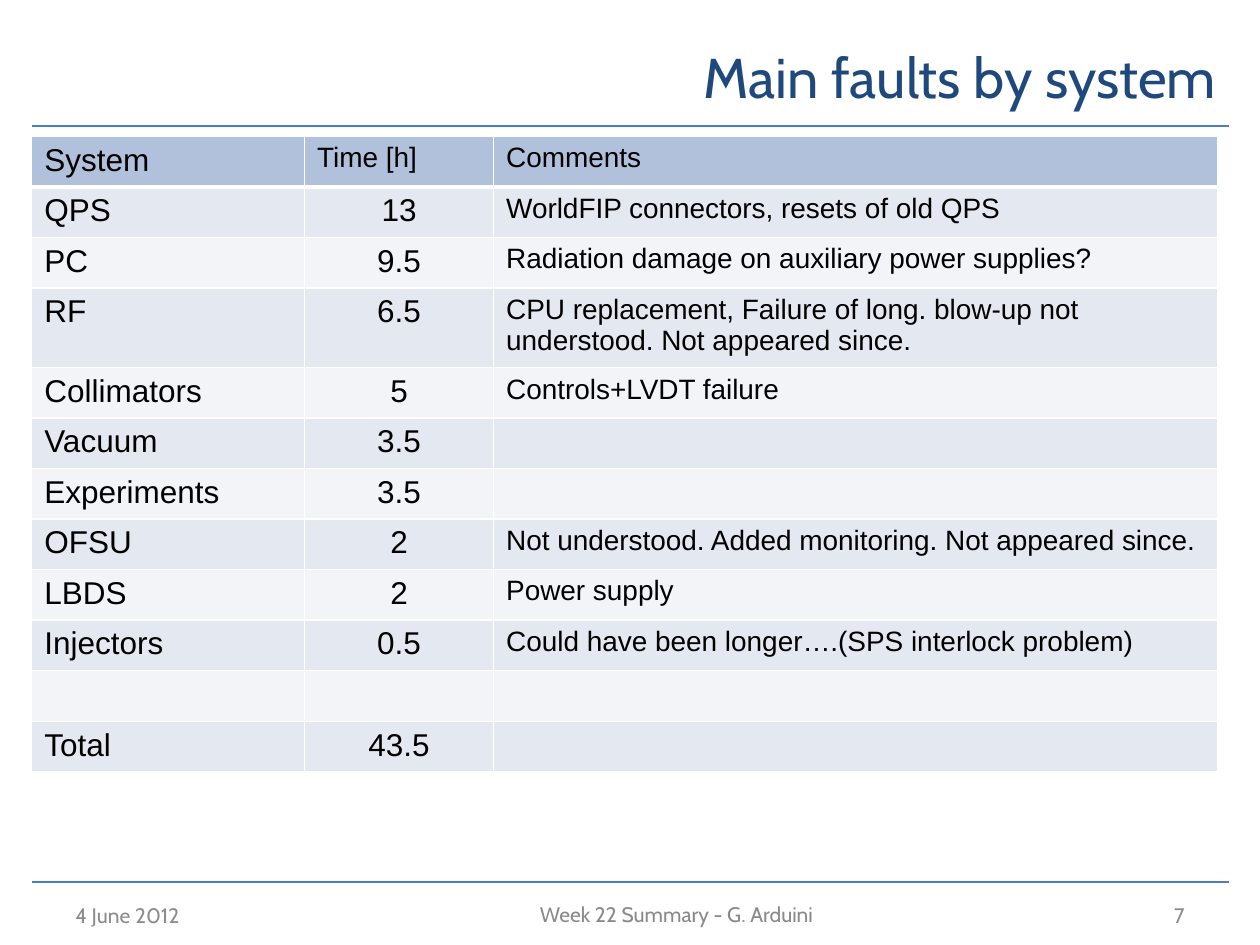
from dataclasses import dataclass

from lxml import etree
from pptx import Presentation
from pptx.dml.color import RGBColor
from pptx.enum.shapes import MSO_CONNECTOR
from pptx.enum.text import MSO_ANCHOR, PP_ALIGN
from pptx.oxml.ns import qn
from pptx.util import Cm, Pt

LEFT, CENTER, RIGHT = PP_ALIGN.LEFT, PP_ALIGN.CENTER, PP_ALIGN.RIGHT
MIDDLE = MSO_ANCHOR.MIDDLE
STRAIGHT = MSO_CONNECTOR.STRAIGHT

HEADER_FILL = "B2C1DB"
BAND_FILLS = ("F2F4F8", "E4E9F1")
COL_WIDTHS = (5.5, 3.81, 14.6)


@dataclass
class Label:
    text: str
    box: tuple[float, float, float, float]
    size: int
    color: str
    align: PP_ALIGN


@dataclass
class Fault:
    system: str = ""
    hours: str = ""
    comment: str = ""
    height: float = 0.97


LABELS = [
    Label("Main faults by system", (4.45, 0.43, 20.32, 2.21), 32, "1F497D", RIGHT),
    Label("4 June 2012", (1.27, 18.21, 5.92, 0.46), 12, "8C8C8C", LEFT),
    Label("Week 22 Summary - G. Arduini", (4.65, 18.21, 17.98, 0.43), 12, "898989", CENTER),
    Label("7", (18.21, 18.21, 5.92, 0.46), 12, "8C8C8C", RIGHT),
]

ROWS = [
    Fault("System", "Time [h]", "Comments", 0.98),
    Fault("QPS", "13", "WorldFIP connectors, resets of old QPS"),
    Fault("PC", "9.5", "Radiation damage on auxiliary power supplies?"),
    Fault("RF", "6.5", "CPU replacement, Failure of long. blow-up not understood. "
          "Not appeared since.", 1.51),
    Fault("Collimators", "5", "Controls+LVDT failure"),
    Fault("Vacuum", "3.5"),
    Fault("Experiments", "3.5"),
    Fault("OFSU", "2", "Not understood. Added monitoring. Not appeared since."),
    Fault("LBDS", "2", "Power supply"),
    Fault("Injectors", "0.5", "Could have been longer….(SPS interlock problem)"),
    Fault(height=1.03),
    Fault("Total", "43.5"),
]


def rgb(value: str) -> RGBColor:
    return RGBColor.from_string(value)


def add_text(p, text: str, font: str, size: int, color: str, align: PP_ALIGN) -> None:
    p.alignment = align
    r = p.add_run()
    r.text = text
    for name, value in {"name": font, "size": Pt(size)}.items():
        setattr(r.font, name, value)
    r.font.color.rgb = rgb(color)


def add_label(s, label: Label) -> None:
    sp = s.shapes.add_textbox(*map(Cm, label.box))
    tf = sp.text_frame
    tf.word_wrap = True
    tf.vertical_anchor = MIDDLE
    add_text(tf.paragraphs[0], label.text, "Cabin", label.size, label.color, label.align)


def add_rule(s, y: float) -> None:
    sp = s.shapes.add_connector(STRAIGHT, Cm(0.64), Cm(y), Cm(24.77), Cm(y))
    sp.line.color.rgb = rgb("4B7EBC")
    sp.line.width = Pt(1.5)
    etree.SubElement(sp._element.spPr, qn("a:effectLst"))


def set_borders(cell, widths: dict[str, int]) -> None:
    tc_pr = cell._tc.get_or_add_tcPr()
    for i, (side, width) in enumerate(widths.items()):
        ln = etree.Element(qn(f"a:{side}"), w=str(Pt(width)))
        fill = etree.SubElement(ln, qn("a:solidFill"))
        etree.SubElement(fill, qn("a:srgbClr"), val="FFFFFF")
        tc_pr.insert(i, ln)


def fill_cell(cell, text: str, size: int, align: PP_ALIGN, fill: str) -> None:
    cell.fill.solid()
    cell.fill.fore_color.rgb = rgb(fill)
    p = cell.text_frame.paragraphs[0]
    if text:
        add_text(p, text, "Arial", size, "000000", align)
    else:
        # An empty cell keeps its row low through its end mark
        end = etree.SubElement(p._p, qn("a:endParaRPr"), sz=str(size * 100))
        etree.SubElement(end, qn("a:latin"), typeface="Arial")


def add_fault_table(s, rows: list[Fault]) -> None:
    width, height = sum(COL_WIDTHS), sum(row.height for row in rows)
    table = s.shapes.add_table(len(rows), len(COL_WIDTHS), Cm(0.64), Cm(2.75),
                               Cm(width), Cm(height)).table
    for col, col_width in zip(table.columns, COL_WIDTHS):
        col.width = Cm(col_width)
    for i, row in enumerate(rows):
        table.rows[i].height = Cm(row.height)
        header = i == 0
        fill = HEADER_FILL if header else BAND_FILLS[i % 2]
        formats = [
            (row.system, 18, LEFT),
            (row.hours, 16 if header else 18, LEFT if header else CENTER),
            (row.comment, 16, LEFT),
        ]
        for j, (text, size, align) in enumerate(formats):
            cell = table.cell(i, j)
            fill_cell(cell, text, size, align, fill)
            set_borders(cell, {"lnL": 1, "lnR": 1, "lnT": 3 if i == 1 else 1,
                               "lnB": 3 if header else 1})


def main() -> None:
    prs = Presentation()
    prs.slide_width, prs.slide_height = Cm(25.4), Cm(19.05)
    s = prs.slides.add_slide(prs.slide_layouts[6])

    # Rules above and below the content
    for y in (2.54, 17.78):
        add_rule(s, y)

    # Title and footer
    for label in LABELS:
        add_label(s, label)

    # Faults
    add_fault_table(s, ROWS)
    prs.save("out.pptx")


if __name__ == "__main__":
    main()
